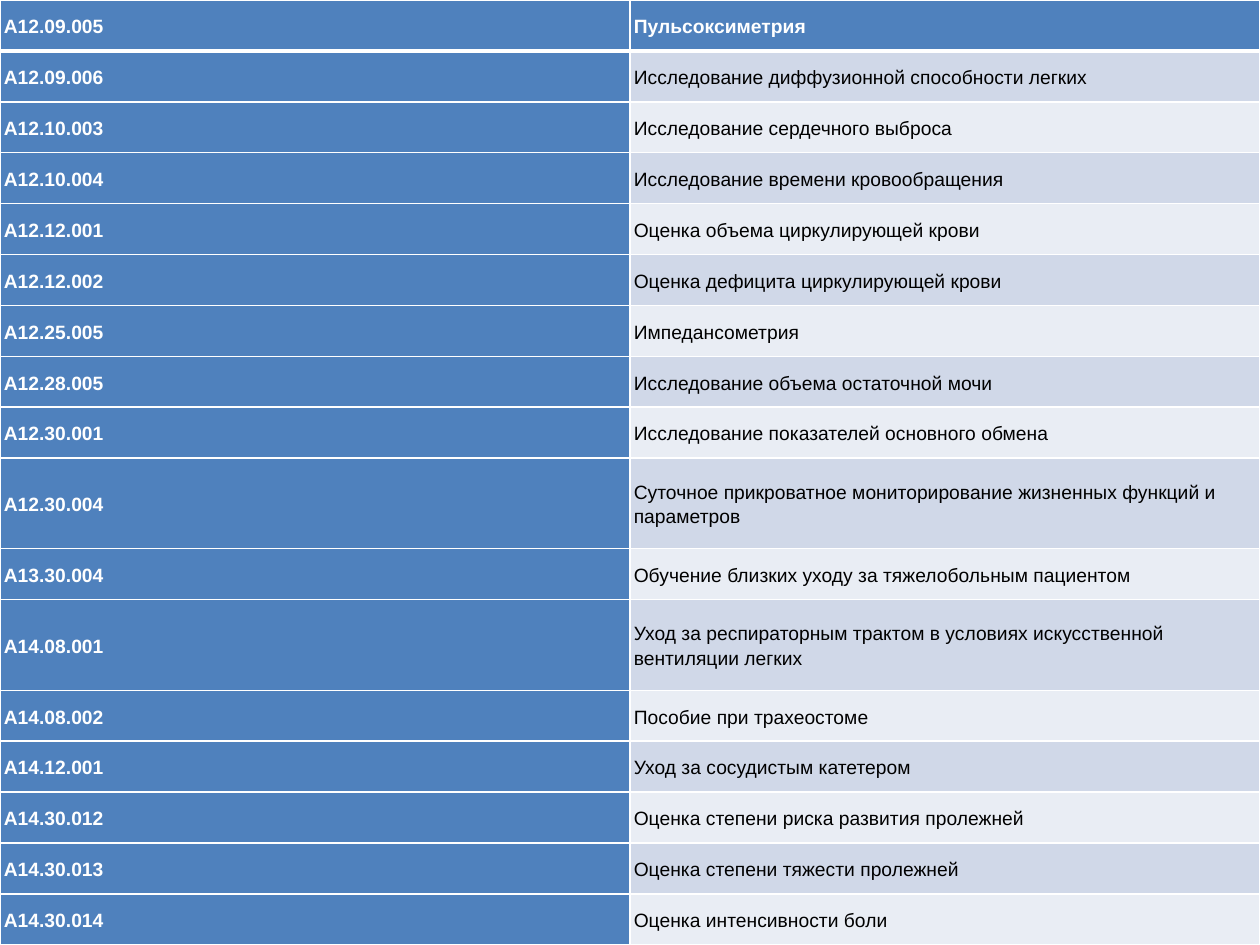
"""Builds a slide with a table of medical service codes and names."""
from lxml import etree
from pptx import Presentation
from pptx.dml.color import RGBColor
from pptx.enum.text import MSO_ANCHOR
from pptx.oxml.ns import qn
from pptx.util import Inches, Pt

MIDDLE = MSO_ANCHOR.MIDDLE
WIDTH, HEIGHT, TALL_ROW = 10, 7.5, 0.72
INSET = 0.03
WHITE, BLACK, BLUE = "FFFFFF", "000000", "4F81BD"
BANDS = ("E9EDF4", "D0D8E8")
TALL_CODES = ("A12.30.004", "A14.08.001")
SERVICES = [
    ("A12.09.005", "Пульсоксиметрия"),
    ("A12.09.006", "Исследование диффузионной способности легких"),
    ("A12.10.003", "Исследование сердечного выброса"),
    ("A12.10.004", "Исследование времени кровообращения"),
    ("A12.12.001", "Оценка объема циркулирующей крови"),
    ("A12.12.002", "Оценка дефицита циркулирующей крови"),
    ("A12.25.005", "Импедансометрия"),
    ("A12.28.005", "Исследование объема остаточной мочи"),
    ("A12.30.001", "Исследование показателей основного обмена"),
    ("A12.30.004", "Суточное прикроватное мониторирование жизненных функций и параметров"),
    ("A13.30.004", "Обучение близких уходу за тяжелобольным пациентом"),
    ("A14.08.001", "Уход за респираторным трактом в условиях искусственной вентиляции легких"),
    ("A14.08.002", "Пособие при трахеостоме"),
    ("A14.12.001", "Уход за сосудистым катетером"),
    ("A14.30.012", "Оценка степени риска развития пролежней"),
    ("A14.30.013", "Оценка степени тяжести пролежней"),
    ("A14.30.014", "Оценка интенсивности боли"),
]


def rgb(color):
    return RGBColor.from_string(color)


def set_borders(cell, top, bottom):
    tc_pr = cell._tc.get_or_add_tcPr()
    widths = {"a:lnL": 1, "a:lnR": 1, "a:lnT": top, "a:lnB": bottom}
    for i, (tag, width) in enumerate(widths.items()):
        ln = etree.Element(qn(tag), w=str(Pt(width)))
        fill = etree.SubElement(ln, qn("a:solidFill"))
        etree.SubElement(fill, qn("a:srgbClr"), val=WHITE)
        tc_pr.insert(i, ln)


def fill_cell(cell, text, fill, color, bold):
    cell.fill.solid()
    cell.fill.fore_color.rgb = rgb(fill)
    cell.vertical_anchor = MIDDLE
    cell.margin_left = cell.margin_right = Inches(INSET)
    cell.margin_top = cell.margin_bottom = Inches(INSET)
    p = cell.text_frame.paragraphs[0]
    p.text = text
    p.line_spacing = 1.15
    p.space_after = Pt(10)
    p.font.name = "Arial"
    p.font.size = Pt(11)
    p.font.bold = bold
    p.font.color.rgb = rgb(color)


def add_services_table(slide):
    count = len(SERVICES)
    short_row = (HEIGHT - len(TALL_CODES) * TALL_ROW) / (count - len(TALL_CODES))
    table = slide.shapes.add_table(
        count, 2, 0, 0, Inches(WIDTH), Inches(HEIGHT)).table
    table.first_col = True
    for i, service in enumerate(SERVICES):
        table.rows[i].height = Inches(TALL_ROW if service[0] in TALL_CODES else short_row)
        for j, text in enumerate(service):
            cell = table.cell(i, j)
            heading = i == 0 or j == 0
            fill_cell(cell, text, BLUE if heading else BANDS[i % 2],
                      WHITE if heading else BLACK, heading)
            set_borders(cell, 3 if i == 1 else 1, 3 if i == 0 else 1)


def main():
    prs = Presentation()
    prs.slide_width, prs.slide_height = Inches(WIDTH), Inches(HEIGHT)
    add_services_table(prs.slides.add_slide(prs.slide_layouts[6]))
    prs.save("out.pptx")


main()
